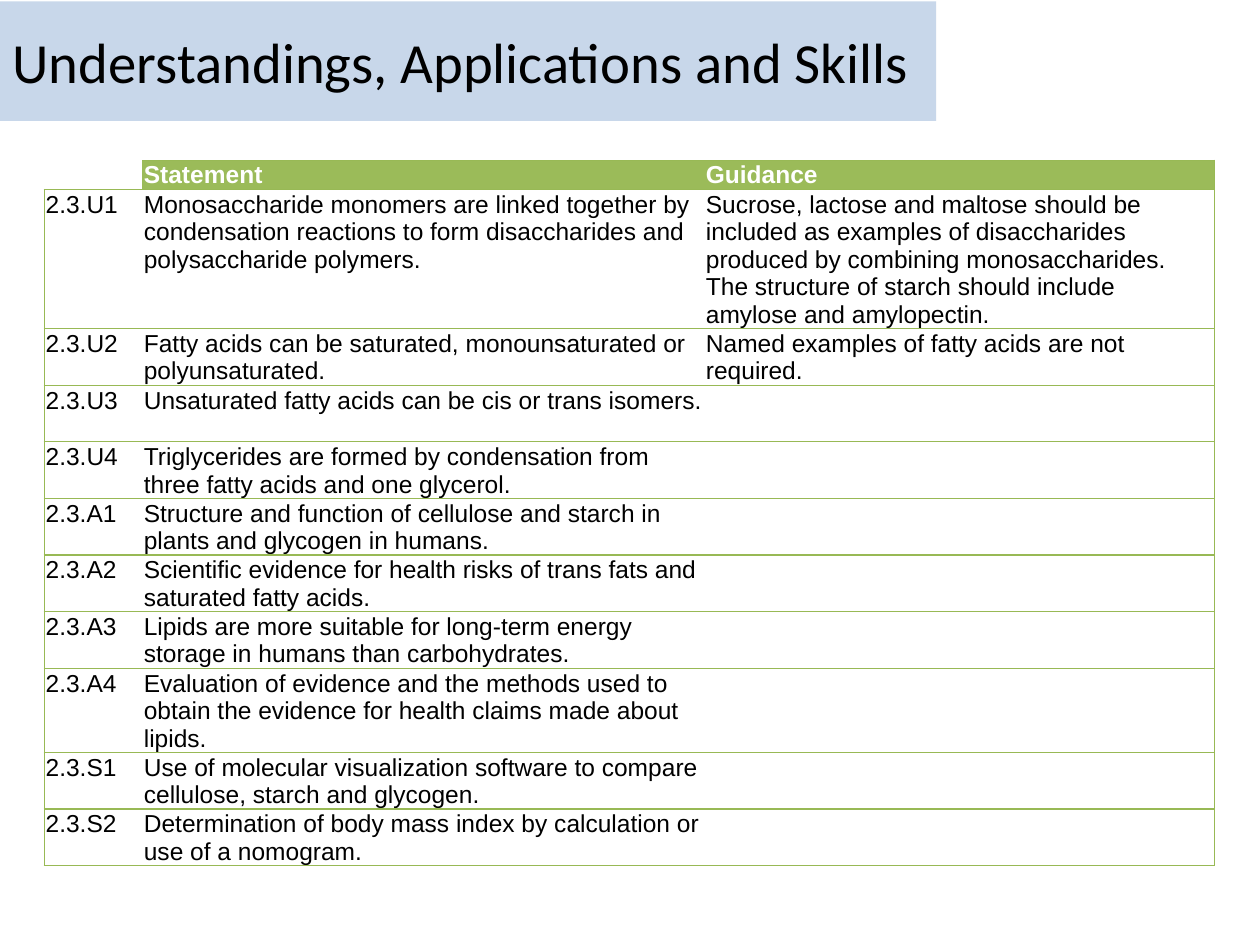
from dataclasses import dataclass

from lxml import etree
from pptx import Presentation
from pptx.dml.color import RGBColor
from pptx.enum import text
from pptx.oxml import ns
from pptx.util import Cm, Pt


@dataclass(frozen=True)
class Theme:
    band: str = "B9CDE5"
    head: str = "9BBB59"
    rule: str = "98B955"
    paper: str = "FFFFFF"
    ink: str = "000000"
    title: float = 32.4
    body: float = 14
    line: float = 0.75


@dataclass(frozen=True)
class Entry:
    code: str
    claim: str
    guide: str = ""
    lines: int = 2


LOOK = Theme()
NO_STYLE = "{2D5ABB26-0587-4C30-8999-92F81FD0307C}"
WIDTHS = (1.98, 11.33, 10.29)
ENTRIES = (
    Entry("", "Statement", "Guidance", 1),
    Entry("2.3.U1", "Monosaccharide monomers are linked together by condensation reactions "
          "to form disaccharides and polysaccharide polymers.",
          "Sucrose, lactose and maltose should be included as examples of disaccharides "
          "produced by combining monosaccharides. The structure of starch should include "
          "amylose and amylopectin.", 5),
    Entry("2.3.U2", "Fatty acids can be saturated, monounsaturated or polyunsaturated.",
          "Named examples of fatty acids are not required."),
    Entry("2.3.U3", "Unsaturated fatty acids can be cis or trans isomers."),
    Entry("2.3.U4", "Triglycerides are formed by condensation from three fatty acids "
          "and one glycerol."),
    Entry("2.3.A1", "Structure and function of cellulose and starch in plants and "
          "glycogen in humans."),
    Entry("2.3.A2", "Scientific evidence for health risks of trans fats and saturated "
          "fatty acids."),
    Entry("2.3.A3", "Lipids are more suitable for long-term energy storage in humans "
          "than carbohydrates."),
    Entry("2.3.A4", "Evaluation of evidence and the methods used to obtain the evidence "
          "for health claims made about lipids.", lines=3),
    Entry("2.3.S1", "Use of molecular visualization software to compare cellulose, "
          "starch and glycogen."),
    Entry("2.3.S2", "Determination of body mass index by calculation or use of a nomogram."),
)


def paint(fill, tone: str) -> None:
    fill.solid()
    fill.fore_color.rgb = RGBColor.from_string(tone)


def style(para, face: str, size: float, tone: str, bold: bool = False) -> None:
    font = para.font
    font.name, font.size, font.bold = face, Pt(size), bold
    font.color.rgb = RGBColor.from_string(tone)


def edge(cell, sides: str) -> None:
    props = cell._tc.get_or_add_tcPr()
    for side in "LRTB":
        line = etree.SubElement(props, ns.qn(f"a:ln{side}"))
        if side in sides:
            line.set("w", str(Pt(LOOK.line)))
            solid = etree.SubElement(line, ns.qn("a:solidFill"))
            etree.SubElement(solid, ns.qn("a:srgbClr"), val=LOOK.rule)
        else:
            etree.SubElement(line, ns.qn("a:noFill"))


def draw_title(slide) -> None:
    title = slide.shapes.title
    title.left, title.top, title.width, title.height = Cm(0), Cm(0.03), Cm(18.87), Cm(2.41)
    paint(title.fill, LOOK.band)
    tint = title.fill._xPr.find(".//" + ns.qn("a:srgbClr"))
    etree.SubElement(tint, ns.qn("a:alpha"), val="78000")
    frame = title.text_frame
    frame.text = "Understandings, Applications and Skills"
    frame.auto_size = text.MSO_AUTO_SIZE.NONE
    frame.vertical_anchor = text.MSO_ANCHOR.MIDDLE
    para = frame.paragraphs[0]
    para.alignment = text.PP_ALIGN.LEFT
    style(para, "Calibri", LOOK.title, LOOK.ink)


def draw_cell(cell, words: str, row: int, col: int) -> None:
    head = row == 0
    cell.margin_left = cell.margin_right = cell.margin_top = Cm(0.03)
    cell.margin_bottom = Cm(0)
    cell.text = words
    style(cell.text_frame.paragraphs[0], "Arial", LOOK.body,
          LOOK.paper if head else LOOK.ink, head)
    if head and col == 0:
        edge(cell, "B")
        cell.fill.background()
        return
    edge(cell, "TB" + ("L" if col == 0 else "R" if col == 2 else ""))
    paint(cell.fill, LOOK.head if head else LOOK.paper)


def draw_table(slide) -> None:
    heights = [Cm(0.55 * entry.lines + 0.04) for entry in ENTRIES]
    frame = slide.shapes.add_table(len(ENTRIES), len(WIDTHS), Cm(0.89), Cm(3.23),
                                   Cm(sum(WIDTHS)), sum(heights))
    table = frame.table
    table.horz_banding = False
    table._tbl.tblPr.find(ns.qn("a:tableStyleId")).text = NO_STYLE
    for col, width in zip(table.columns, WIDTHS):
        col.width = Cm(width)
    for row, entry in enumerate(ENTRIES):
        table.rows[row].height = heights[row]
        for col, words in enumerate((entry.code, entry.claim, entry.guide)):
            draw_cell(table.cell(row, col), words, row, col)


def main() -> None:
    deck = Presentation()
    deck.slide_width, deck.slide_height = Cm(25.4), Cm(19.05)
    slide = deck.slides.add_slide(deck.slide_layouts[5])
    draw_title(slide)
    draw_table(slide)
    deck.save("out.pptx")


if __name__ == "__main__":
    main()
